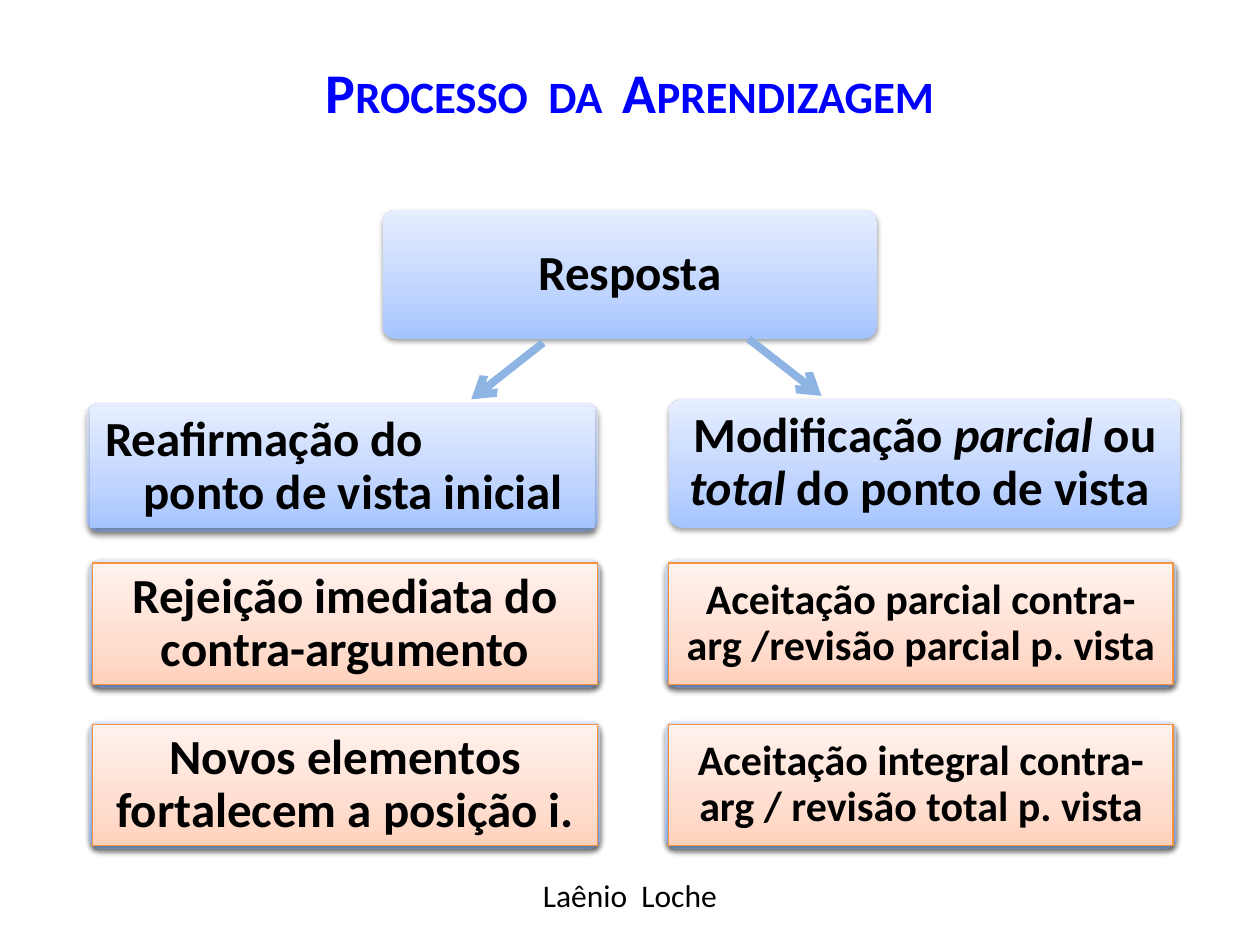
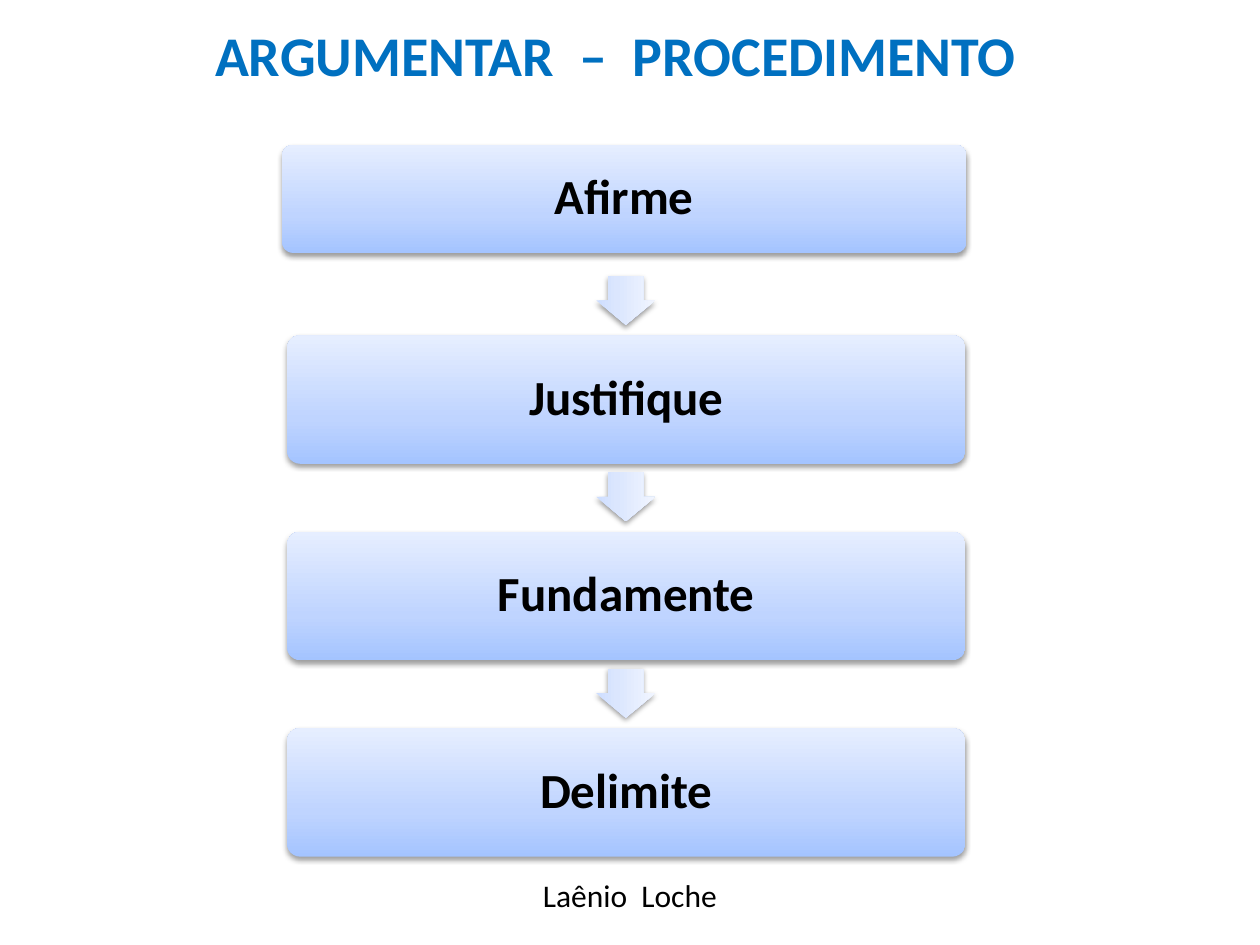
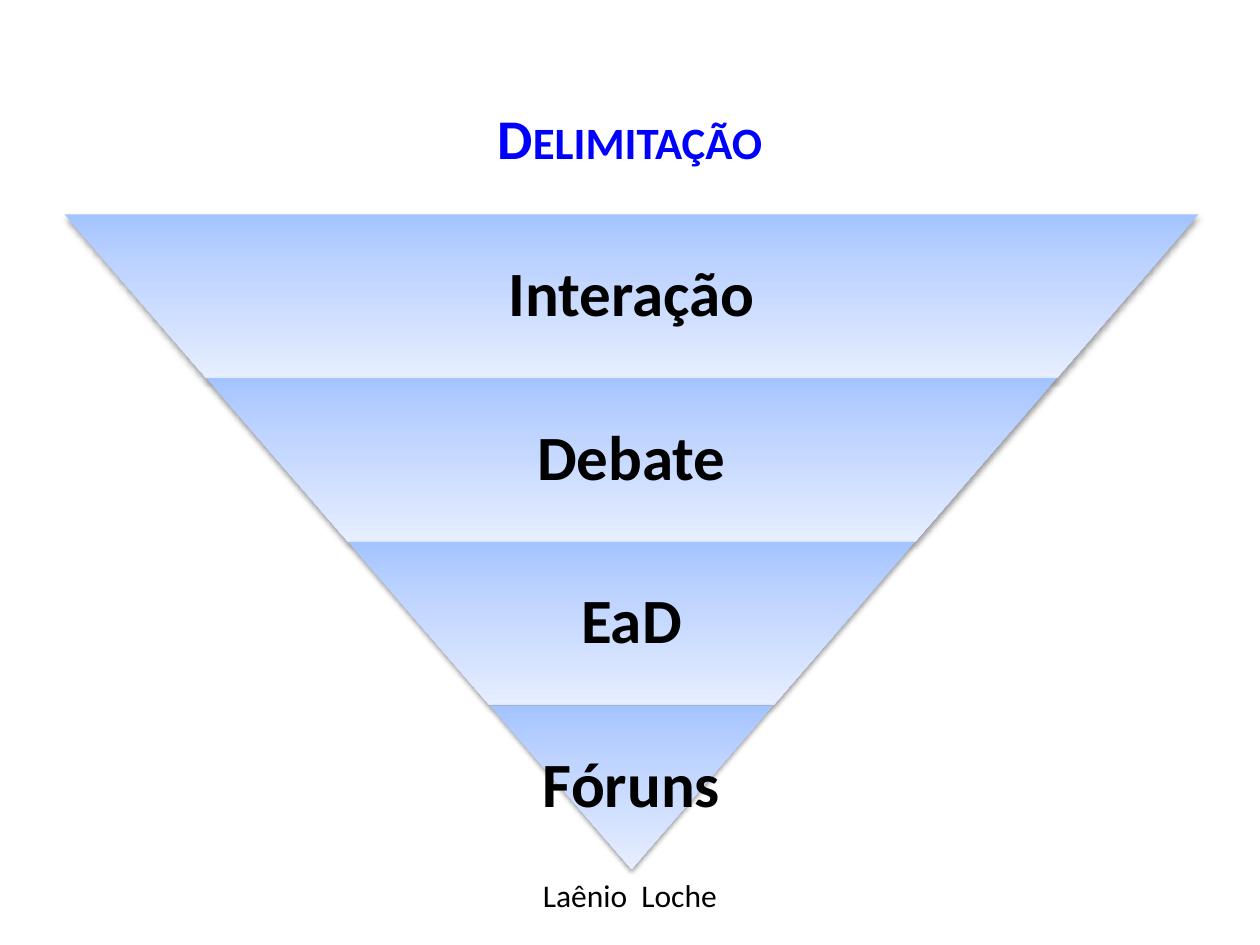
from dataclasses import dataclass

from lxml.etree import SubElement
from pptx import Presentation
from pptx.dml.color import RGBColor
from pptx.enum.shapes import MSO_CONNECTOR, MSO_SHAPE
from pptx.enum.text import MSO_ANCHOR, PP_ALIGN
from pptx.oxml.ns import qn
from pptx.util import Cm, Pt


@dataclass(frozen=True)
class Theme:
    font: str = "Calibri"
    ink: str = "000000"
    title: str = "0000FF"
    alert: str = "0070C0"
    edge: str = "F69240"
    link: str = "8EB4E3"
    blue: tuple = ("A4C4FF", "BFD4FF", "E6EEFF")
    pale: tuple = ("CDDDFF", "DBE6FE", "F1F5FF")
    peach: tuple = ("FFD2BD", "FFDED0", "FFF2ED")
    soft: tuple = (38, 3.1, 1.6)
    deep: tuple = (32, 3.5, 2.2)
    head: int = 32
    big: int = 36
    body: int = 28
    small: int = 24
    foot: int = 18


T = Theme()
CARD_H = 2.59
RIM = 0.07
STEP = 3.96


def place(box):
    return [Cm(n) for n in box]


def write(shape, *paras, size=T.body, color=T.ink, bold=True, caps=False,
          align=PP_ALIGN.CENTER, anchor=MSO_ANCHOR.MIDDLE, pad=None, space=None):
    """Fill a shape with paragraphs; each is a string or a list of (text, italic)."""
    frame = shape.text_frame
    frame.word_wrap = True
    frame.vertical_anchor = anchor
    if pad is not None:
        frame.margin_left = frame.margin_right = Cm(pad)
        frame.margin_top = frame.margin_bottom = Cm(pad)
    for i, para in enumerate(paras):
        line = frame.add_paragraph() if i else frame.paragraphs[0]
        line.alignment = align
        if space:
            line.line_spacing = space
        for text, slant in [(para, False)] if isinstance(para, str) else para:
            run = line.add_run()
            run.text = text
            font = run.font
            font.name, font.size, font.bold = T.font, Pt(size), bold
            font.color.rgb = RGBColor.from_string(color)
            if slant:
                font.italic = True
            if caps:
                font._element.set("cap", "small")
    return frame


def label(slide, box, *paras, **fmt):
    return write(slide.shapes.add_textbox(*place(box)), *paras, **fmt)


def shade(shape, tones):
    """Give a gradient that runs upwards through three tones."""
    shape.fill.background()
    props = shape.element.spPr
    blank = props.find(qn("a:noFill"))
    grad = SubElement(props, qn("a:gradFill"), rotWithShape="1")
    stops = SubElement(grad, qn("a:gsLst"))
    for spot, tone in zip((0, 35, 100), tones):
        stop = SubElement(stops, qn("a:gs"), pos=str(spot * 1000))
        SubElement(stop, qn("a:srgbClr"), val=tone)
    SubElement(grad, qn("a:lin"), ang="16200000", scaled="0")
    props.replace(blank, grad)


def glow(shape, alpha, blur, gap):
    """Add a black shadow that falls straight down."""
    shape.shadow.inherit = False
    effects = shape.element.spPr.find(qn("a:effectLst"))
    cast = SubElement(effects, qn("a:outerShdw"), blurRad=str(Pt(blur)),
                      dist=str(Pt(gap)), dir="5400000", rotWithShape="0")
    tint = SubElement(cast, qn("a:srgbClr"), val="000000")
    SubElement(tint, qn("a:alpha"), val=str(alpha * 1000))


def solid(slide, kind, box, tones=T.blue, adjust=(), turn=0, edge=None, cast=T.soft):
    shape = slide.shapes.add_shape(kind, *place(box))
    for i, value in enumerate(adjust):
        shape.adjustments[i] = value
    shape.rotation = turn
    shade(shape, tones)
    if edge:
        shape.line.color.rgb = RGBColor.from_string(edge)
        shape.line.width = Pt(0.75)
    else:
        shape.line.fill.background()
    glow(shape, *cast)
    return shape


def card(slide, box, *paras, face=None, edge=None, cast=T.soft, size=T.body):
    """Draw a rounded card whose text sits on an inner layer, shaded if face is set."""
    solid(slide, MSO_SHAPE.ROUNDED_RECTANGLE, box, adjust=[0.1], cast=cast)
    left, top, width, height = box
    inner = (left + RIM, top + RIM, width - 2 * RIM, height - 2 * RIM)
    if face:
        layer = solid(slide, MSO_SHAPE.RECTANGLE, inner, face, edge=edge, cast=cast)
    else:
        layer = slide.shapes.add_textbox(*place(inner))
    return write(layer, *paras, size=size, pad=0.3, space=0.9)


def arrow(slide, start, end):
    line = slide.shapes.add_connector(MSO_CONNECTOR.STRAIGHT, *place(start + end))
    line.line.color.rgb = RGBColor.from_string(T.link)
    line.line.width = Pt(4.5)
    props = line.element.spPr
    SubElement(props.find(qn("a:ln")), qn("a:tailEnd"), type="arrow")
    SubElement(props, qn("a:effectLst"))


def page(deck, title, box, color=T.title, caps=True, align=PP_ALIGN.CENTER):
    """Add a blank slide with its title and the shared footer."""
    slide = deck.slides.add_slide(deck.slide_layouts[6])
    label(slide, (8, 17.53, 9.4, 1.02), "Laênio  Loche", size=T.foot,
          bold=False, anchor=MSO_ANCHOR.TOP)
    label(slide, box, title, size=T.head, color=color, caps=caps, align=align)
    return slide


def answer(deck):
    slide = page(deck, "Processo  da  Aprendizagem", (4.47, 0.74, 16.46, 2.18))
    wide = 10.31
    card(slide, (7.72, 4.24, 9.96, CARD_H), "Resposta")
    frame = card(slide, (1.75, 8.13, wide, CARD_H), "Reafirmação do",
                 "ponto de vista inicial", face=T.blue, cast=T.deep)
    first, second = frame.paragraphs
    first.alignment = PP_ALIGN.LEFT
    second._p.get_or_add_pPr().set("marL", str(Cm(0.43)))
    card(slide, (13.49, 8.05, wide, CARD_H),
         [("Modificação ", False), ("parcial", True), (" ou ", False),
          ("total ", True), ("do ponto de vista ", False)])
    columns = (
        (1.8, T.body, ("Rejeição imediata do contra-argumento",
                       "Novos elementos fortalecem a posição i.")),
        (13.41, T.small, ("Aceitação parcial contra-arg /revisão parcial p. vista",
                          "Aceitação integral contra-arg / revisão total p. vista")),
    )
    for left, size, texts in columns:
        for row, text in enumerate(texts):
            card(slide, (left, 11.28 + 3.25 * row, wide, CARD_H), text,
                 face=T.peach, edge=T.edge, size=size)
    arrow(slide, (10.95, 6.91), (9.5, 8.05))
    arrow(slide, (15.09, 6.83), (16.56, 7.98))


def steps(deck):
    slide = page(deck, "ARGUMENTAR  –  PROCEDIMENTO", (-2.11, 0, 22.86, 2.18),
                 color=T.alert, caps=False, align=PP_ALIGN.RIGHT)
    card(slide, (5.69, 2.92, 13.79, 2.18), "Afirme")
    for i, text in enumerate(("Justifique", "Fundamente", "Delimite")):
        solid(slide, MSO_SHAPE.RIGHT_ARROW, (12.12, 5.46 + STEP * i, 0.99, 1.19),
              T.pale, adjust=[0.6, 0.5], turn=90)
        card(slide, (5.79, 6.76 + STEP * i, 13.67, CARD_H), text)


def funnel(deck):
    slide = page(deck, "Delimitação", (1.27, 1.68, 22.86, 2.18))
    tiers = ("Interação", "Debate", "EaD", "Fóruns")
    mid, top, full, high = 12.73, 4.32, 22.86, 3.3
    for i, text in enumerate(tiers):
        width = full * (len(tiers) - i) / len(tiers)
        room = width if text == tiers[-1] else width * 0.65
        y = top + high * i
        solid(slide, MSO_SHAPE.TRAPEZOID, (mid - width / 2, y, width, high),
              adjust=[0.866], turn=180)
        label(slide, (mid - room / 2, y, room, high), text, size=T.big,
              pad=0.13, space=0.9)


def main():
    deck = Presentation()
    deck.slide_width, deck.slide_height = Cm(25.4), Cm(19.05)
    answer(deck)
    steps(deck)
    funnel(deck)
    deck.save("out.pptx")


if __name__ == "__main__":
    main()
